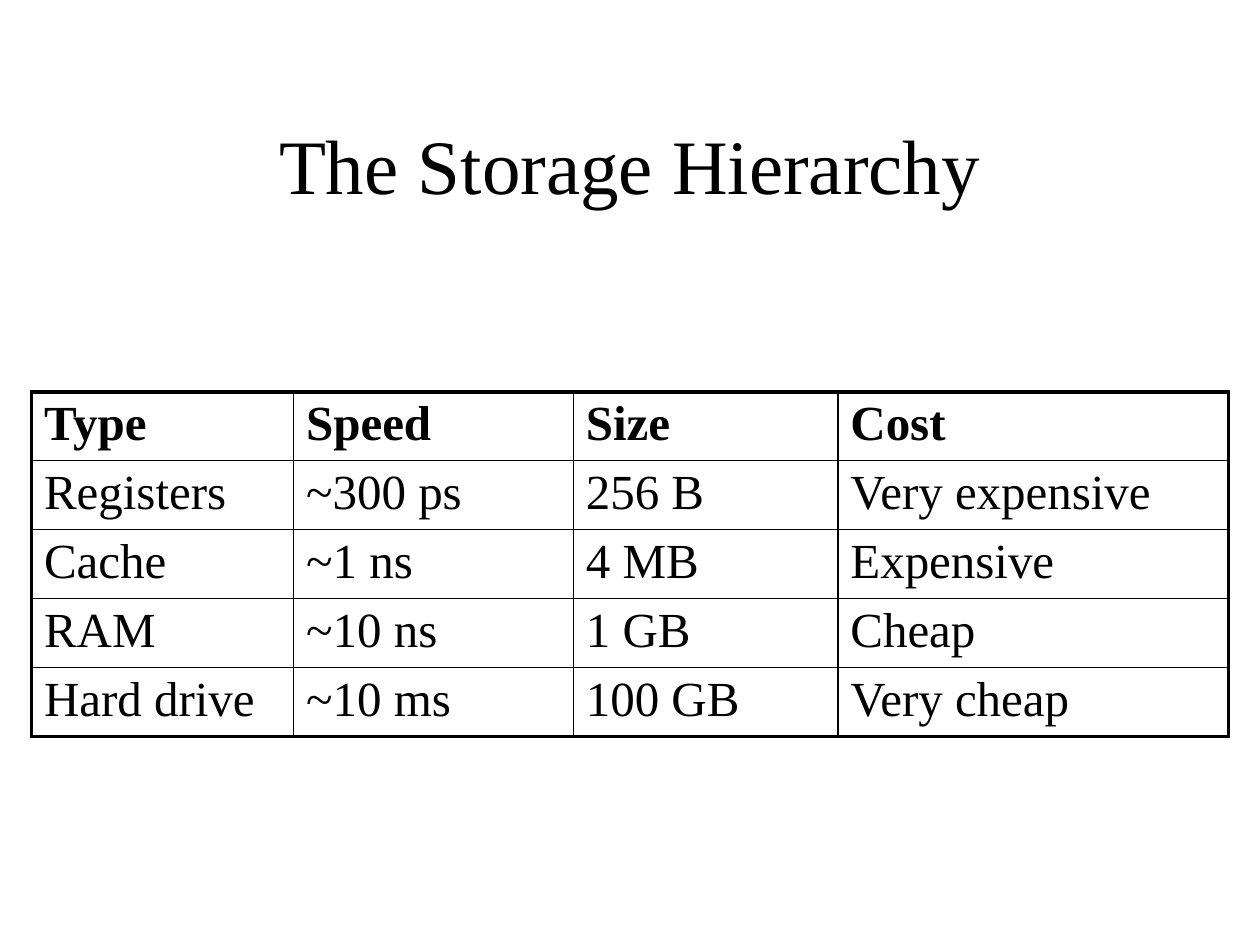
from lxml import etree
from pptx import Presentation
from pptx.dml.color import RGBColor
from pptx.enum.text import MSO_ANCHOR, PP_ALIGN
from pptx.oxml.ns import qn
from pptx.util import Inches, Pt

CENTER = PP_ALIGN.CENTER
MIDDLE = MSO_ANCHOR.MIDDLE
FONT = "Times New Roman"
BLACK = "000000"
OUTER_BORDER = 2.25
INNER_BORDER = 1

TITLE = "The Storage Hierarchy"
STORAGE_ROWS = [
    ("Type", "Speed", "Size", "Cost"),
    ("Registers", "~300 ps", "256 B", "Very expensive"),
    ("Cache", "~1 ns", "4 MB", "Expensive"),
    ("RAM", "~10 ns", "1 GB", "Cheap"),
    ("Hard drive", "~10 ms", "100 GB", "Very cheap"),
]
COLUMN_WIDTHS = [2.08, 2.22, 2.1, 3.1]
ROW_HEIGHT = 0.53


def format_font(paragraph, size, bold=False, color=BLACK):
    font = paragraph.runs[0].font
    font.name = FONT
    font.size = Pt(size)
    font.bold = bold
    font.color.rgb = RGBColor.from_string(color)


def set_borders(cell, widths, color=BLACK):
    properties = cell._tc.get_or_add_tcPr()
    for index, (side, width) in enumerate(widths.items()):
        line = etree.Element(qn(f"a:ln{side}"), w=str(Pt(width)))
        fill = etree.SubElement(line, qn("a:solidFill"))
        etree.SubElement(fill, qn("a:srgbClr"), val=color)
        properties.insert(index, line)


def add_title(slide):
    box = slide.shapes.add_textbox(Inches(0.75), Inches(0.67), Inches(8.5), Inches(1.25))
    text_frame = box.text_frame
    text_frame.word_wrap = True
    text_frame.vertical_anchor = MIDDLE
    text_frame.text = TITLE
    paragraph = text_frame.paragraphs[0]
    paragraph.alignment = CENTER
    format_font(paragraph, 44)


def add_storage_table(slide):
    row_count, column_count = len(STORAGE_ROWS), len(COLUMN_WIDTHS)
    table = slide.shapes.add_table(
        row_count, column_count, Inches(0.25), Inches(3.11),
        Inches(sum(COLUMN_WIDTHS)), Inches(ROW_HEIGHT * row_count)).table
    table.horz_banding = False
    for column, width in zip(table.columns, COLUMN_WIDTHS):
        column.width = Inches(width)
    for row_index, values in enumerate(STORAGE_ROWS):
        table.rows[row_index].height = Inches(ROW_HEIGHT)
        for column_index, value in enumerate(values):
            cell = table.cell(row_index, column_index)
            cell.margin_top = cell.margin_bottom = Inches(0.04)
            cell.fill.background()
            cell.text_frame.text = value
            format_font(cell.text_frame.paragraphs[0], 28, bold=row_index == 0)
            on_edge = {
                "L": column_index == 0,
                "R": column_index == column_count - 1,
                "T": row_index == 0,
                "B": row_index == row_count - 1,
            }
            set_borders(cell, {side: OUTER_BORDER if edge else INNER_BORDER
                               for side, edge in on_edge.items()})


def main():
    presentation = Presentation()
    presentation.slide_width = Inches(10)
    presentation.slide_height = Inches(7.5)
    slide = presentation.slides.add_slide(presentation.slide_layouts[6])
    add_title(slide)
    add_storage_table(slide)
    presentation.save("out.pptx")


if __name__ == "__main__":
    main()
